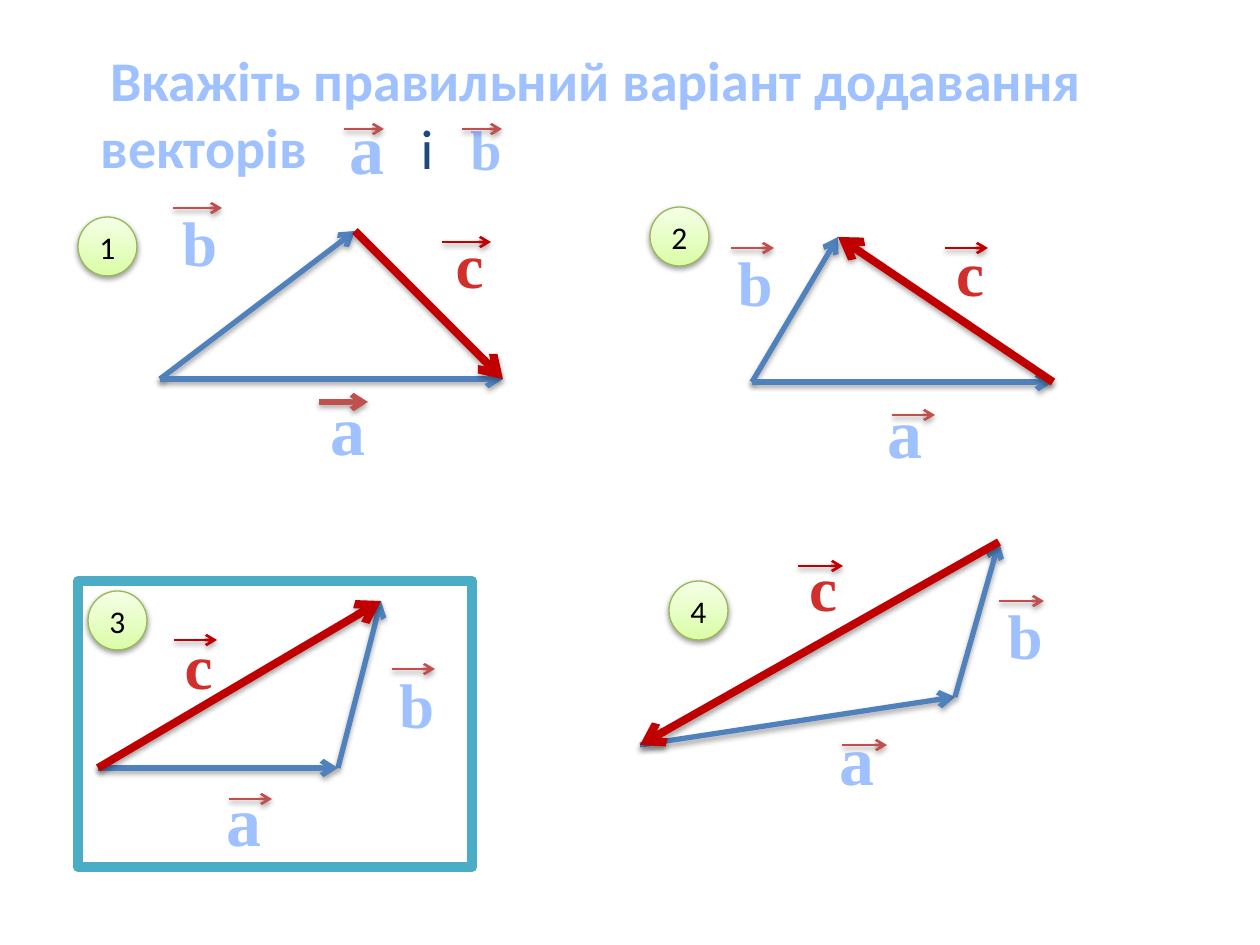
from pptx import Presentation
from pptx.dml.color import RGBColor
from pptx.enum.shapes import MSO_CONNECTOR, MSO_SHAPE
from pptx.enum.text import MSO_ANCHOR, MSO_AUTO_SIZE, PP_ALIGN
from pptx.oxml import parse_xml
from pptx.oxml.ns import nsdecls, qn
from pptx.util import Emu, Pt

STRAIGHT = MSO_CONNECTOR.STRAIGHT
RECTANGLE = MSO_SHAPE.RECTANGLE
CIRCLE = MSO_SHAPE.FLOWCHART_CONNECTOR
CENTER = PP_ALIGN.CENTER
MIDDLE = MSO_ANCHOR.MIDDLE
GROW = MSO_AUTO_SIZE.SHAPE_TO_FIT_TEXT
PX_PER_INCH = 126
BADGE_SIZE = 59
LETTER_HEIGHTS = {32: 81, 36: 89, 40: 97}
LETTER_SIZES = {"a": 40, "b": 36, "c": 36}
COLORS = {
    "frame": "4BACC6", "white": "FFFFFF", "black": "000000",
    "vector": "4F81BD", "sum": "C00000", "mark": "C0504D",
    "letter": "A0C1FF", "sum_letter": "D02F2C", "title": "1F497D",
    "badge_low": "DAFDA7", "badge_high": "F5FFE7", "badge_line": "98B955",
}
VARIANTS = [
    {
        "badge": (78, 217), "width": 105, "mark": 49,
        "vectors": {"b": (160, 379, 355, 231), "a": (160, 379, 503, 379), "c": (355, 231, 503, 379)},
        "letters": {"b": (147, 197, 173, 208), "a": (295, 379, 319, 402), "c": (417, 219, 442, 242)},
        "bold_mark": "a",
    },
    {
        "badge": (650, 207), "width": 92, "mark": 43,
        "vectors": {"b": (752, 382, 838, 237), "a": (752, 382, 1053, 382), "c": (1053, 382, 838, 237)},
        "letters": {"a": (859, 382, 892, 415), "b": (709, 237, 731, 248), "c": (924, 227, 945, 248)},
    },
    {
        "badge": (88, 591), "width": 93, "mark": 43,
        "vectors": {"b": (338, 768, 381, 601), "a": (98, 768, 338, 768), "c": (98, 768, 381, 601)},
        "letters": {"b": (370, 659, 392, 669), "a": (197, 770, 229, 799), "c": (152, 620, 174, 640)},
    },
    {
        "badge": (669, 581), "width": 96, "mark": 45,
        "vectors": {"a": (640, 745, 955, 697), "b": (955, 697, 999, 542), "c": (999, 542, 640, 745)},
        "letters": {"a": (809, 709, 842, 745), "b": (977, 590, 999, 601), "c": (775, 542, 798, 566)},
    },
]


def px(*lengths):
    """Turn pixel lengths into EMU."""
    return [Emu(round(length * 914400 / PX_PER_INCH)) for length in lengths]


def color(name):
    """Look up a named colour."""
    return RGBColor.from_string(COLORS[name])


def add_shadow(shape, distance, opacity):
    """Give a shape a soft shadow straight below it."""
    shape._element.spPr.append(parse_xml(
        f'<a:effectLst {nsdecls("a")}><a:outerShdw blurRad="40000" dist="{distance}" '
        f'dir="5400000" rotWithShape="0"><a:srgbClr val="{COLORS["black"]}">'
        f'<a:alpha val="{opacity * 1000}"/></a:srgbClr></a:outerShdw></a:effectLst>'))


def add_run(paragraph, text, font_name, size, color_name, bold=False):
    """Add one formatted run."""
    run = paragraph.add_run()
    run.text = text
    run.font.name = font_name
    run.font.size = Pt(size)
    run.font.bold = bold
    run.font.color.rgb = color(color_name)


def add_text_box(shapes, *box):
    """Add a wrapping text box and return its first paragraph."""
    frame = shapes.add_textbox(*px(*box)).text_frame
    frame.word_wrap = True
    frame.auto_size = GROW
    return frame.paragraphs[0]


def add_arrow(shapes, ends, color_name, weight):
    """Add a straight arrow with a shadow."""
    arrow = shapes.add_connector(STRAIGHT, *px(*ends))
    arrow.line.color.rgb = color(color_name)
    arrow.line.width = Pt(weight)
    outline = arrow._element.spPr.find(qn("a:ln"))
    outline.append(parse_xml(f'<a:tailEnd {nsdecls("a")} type="arrow"/>'))
    add_shadow(arrow, 23000, 35)


def add_vector_letter(shapes, letter, place, width, mark, size, weight=1.5):
    """Add a vector's letter with the arrow mark over it."""
    left, top, mark_left, mark_top = place
    is_sum = letter == "c"
    paragraph = add_text_box(shapes, left, top, width, LETTER_HEIGHTS[size])
    paragraph.alignment = CENTER
    add_run(paragraph, letter, "Times New Roman", size, "sum_letter" if is_sum else "letter", True)
    add_arrow(shapes, (mark_left, mark_top, mark_left + mark, mark_top),
              "sum" if is_sum else "mark", weight)


def add_variant(slide, variant):
    """Add one group of three vectors and their letters."""
    shapes = slide.shapes.add_group_shape().shapes
    for name, ends in variant["vectors"].items():
        is_sum = name == "c"
        add_arrow(shapes, ends, "sum" if is_sum else "vector", 4.5 if is_sum else 3)
    for letter, place in variant["letters"].items():
        weight = 3 if letter == variant.get("bold_mark") else 1.5
        add_vector_letter(shapes, letter, place, variant["width"], variant["mark"],
                          LETTER_SIZES[letter], weight)


def add_answer_frame(slide):
    """Add the frame around the correct variant."""
    frame = slide.shapes.add_shape(RECTANGLE, *px(78, 581, 394, 286))
    frame.shadow.inherit = False
    frame.fill.solid()
    frame.fill.fore_color.rgb = color("white")
    frame.line.color.rgb = color("frame")
    frame.line.width = Pt(6)


def add_title(slide):
    """Add the question, its two vector letters and the word between them."""
    question = add_text_box(slide.shapes, 88, 39, 1123, 149)
    properties = question._p.get_or_add_pPr()
    properties.set("marL", "0")
    properties.set("indent", str(px(10)[0]))
    add_run(question, "Вкажіть правильний варіант додавання векторів", "Calibri", 32, "letter", True)
    conjunction = add_text_box(slide.shapes, 402, 107, 50, 81)
    conjunction.alignment = CENTER
    add_run(conjunction, "і", "Calibri", 32, "title")
    add_vector_letter(slide.shapes, "a", (325, 98, 344, 129), 84, 40, 40)
    add_vector_letter(slide.shapes, "b", (444, 108, 462, 129), 84, 40, 32)


def add_badge(slide, number, position):
    """Add a numbered green circle."""
    badge = slide.shapes.add_shape(CIRCLE, *px(*position, BADGE_SIZE, BADGE_SIZE))
    badge.fill.gradient()
    badge.fill.gradient_angle = 90
    for stop, name in zip(badge.fill.gradient_stops, ("badge_low", "badge_high")):
        stop.color.rgb = color(name)
    badge.line.color.rgb = color("badge_line")
    badge.line.width = Pt(0.75)
    add_shadow(badge, 20000, 38)
    frame = badge.text_frame
    frame.margin_left = frame.margin_right = frame.margin_top = frame.margin_bottom = 0
    frame.vertical_anchor = MIDDLE
    paragraph = frame.paragraphs[0]
    paragraph.alignment = CENTER
    add_run(paragraph, str(number), "Calibri", 18, "black")


def main():
    """Build the vector addition slide."""
    presentation = Presentation()
    presentation.slide_width, presentation.slide_height = px(1260, 945)
    slide = presentation.slides.add_slide(presentation.slide_layouts[6])
    add_answer_frame(slide)
    for variant in VARIANTS:
        add_variant(slide, variant)
    add_title(slide)
    for number, variant in enumerate(VARIANTS, 1):
        add_badge(slide, number, variant["badge"])
    presentation.save("out.pptx")


if __name__ == "__main__":
    main()
